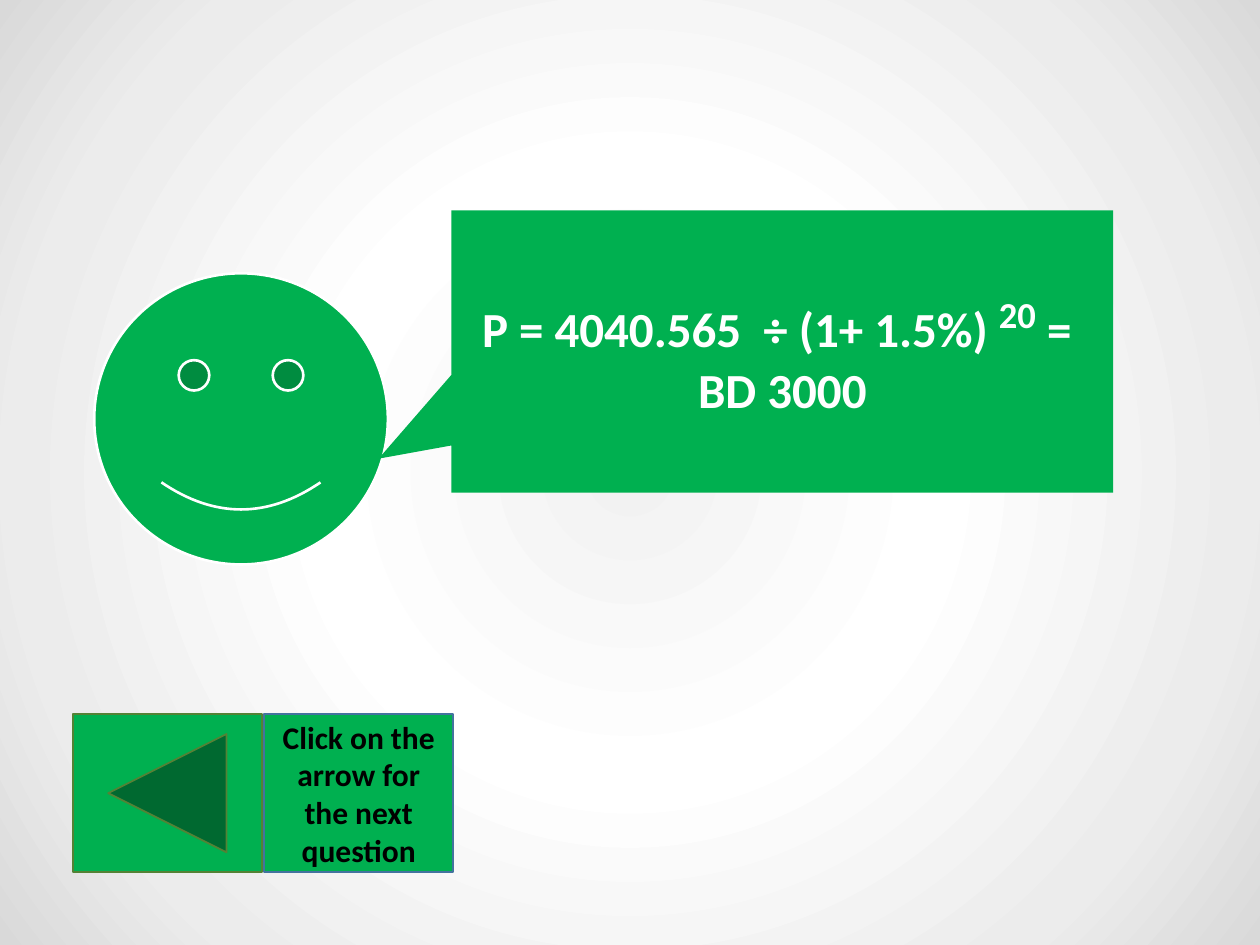
from dataclasses import dataclass

from pptx import Presentation
from pptx.dml.color import RGBColor
from pptx.enum.shapes import MSO_SHAPE as Shape
from pptx.enum.text import MSO_ANCHOR as Anchor, PP_ALIGN as Align
from pptx.oxml import parse_xml
from pptx.oxml.ns import nsdecls
from pptx.util import Cm, Pt


@dataclass(frozen=True)
class Theme:
    """Colours, font and type sizes of the slide."""
    font: str = "Calibri"
    green: str = "00B050"
    white: str = "FFFFFF"
    black: str = "000000"
    button_edge: str = "548235"
    hint_edge: str = "43739E"
    backdrop: tuple = ((0, "F2F2F2"), (39, "FFFFFF"), (78, "ECECEC"), (100, "D9D9D9"))
    formula_size: int = 28
    exponent_size: int = 36
    hint_size: int = 18


def add_text(paragraph, text, *, font, size, color, bold=True, baseline=0):
    """Append a formatted run to a centred paragraph."""
    paragraph.alignment = Align.CENTER
    run = paragraph.add_run()
    run.text = text
    run.font.name = font
    run.font.size = Pt(size)
    run.font.bold = bold
    run.font.color.rgb = RGBColor.from_string(color)
    if baseline:
        run._r.get_or_add_rPr().set("baseline", str(baseline * 1000))


class SlideBuilder:
    """Holds the theme and the current slide."""

    def __init__(self, slide, theme):
        self.slide = slide
        self.theme = theme

    def radial_background(self, stops):
        """Fill the background with a gradient spreading from the centre."""
        stop_xml = "".join(
            f'<a:gs pos="{position * 1000}"><a:srgbClr val="{color}"/></a:gs>'
            for position, color in stops)
        self.slide.element.cSld.insert(0, parse_xml(
            f'<p:bg {nsdecls("p", "a")}><p:bgPr><a:gradFill rotWithShape="1">'
            f'<a:gsLst>{stop_xml}</a:gsLst><a:path path="circle">'
            '<a:fillToRect l="50000" t="50000" r="50000" b="50000"/></a:path>'
            '</a:gradFill><a:effectLst/></p:bgPr></p:bg>'))

    def figure(self, kind, box, edge=None, edge_width=1, adjustments=(), flip=False):
        """Add a green preset shape with an optional outline."""
        figure = self.slide.shapes.add_shape(kind, *map(Cm, box))
        figure.shadow.inherit = False
        figure.fill.solid()
        figure.fill.fore_color.rgb = RGBColor.from_string(self.theme.green)
        if edge:
            figure.line.color.rgb = RGBColor.from_string(edge)
            figure.line.width = Pt(edge_width)
        else:
            figure.line.fill.background()
        for index, value in enumerate(adjustments):
            figure.adjustments[index] = value
        if flip:
            figure.element.spPr.xfrm.set("flipH", "1")
        return figure

    def caption(self, figure, lines, size, color):
        """Write lines of (text, format) pieces in the middle of a figure."""
        frame = figure.text_frame
        frame.word_wrap = True
        frame.vertical_anchor = Anchor.MIDDLE
        base = {"font": self.theme.font, "size": size, "color": color}
        for index, pieces in enumerate(lines):
            paragraph = frame.add_paragraph() if index else frame.paragraphs[0]
            for text, changes in pieces:
                add_text(paragraph, text, **{**base, **changes})


def main():
    """Build the answer slide and save it."""
    deck = Presentation()
    deck.slide_width, deck.slide_height = Cm(25.4), Cm(19.05)
    theme = Theme()
    answer = SlideBuilder(deck.slides.add_slide(deck.slide_layouts[6]), theme)
    answer.radial_background(theme.backdrop)

    answer.figure(Shape.SMILEY_FACE, (1.9, 5.51, 5.92, 5.87), theme.white, 1.5)

    left, top, width, height = 1.47, 14.4, 3.81, 3.18
    answer.figure(Shape.ACTION_BUTTON_BACK_OR_PREVIOUS, (left, top, width, height),
                  theme.button_edge)

    formula = answer.figure(Shape.RECTANGULAR_CALLOUT, (9.1, 4.24, 13.34, 5.69),
                            adjustments=(-0.61, 0.38))
    exponent = {"size": theme.exponent_size, "baseline": 30}
    answer.caption(formula, [
        [("P = 4040.565  ÷ (1+ 1.5%) ", {}), ("20", exponent), (" = ", {})],
        [("BD 3000", {})],
    ], theme.formula_size, theme.white)

    hint = answer.figure(Shape.PENTAGON, (left + width + 0.05, top, width, height),
                         theme.hint_edge, adjustments=(0,), flip=True)
    answer.caption(hint, [[("Click on the arrow for the next question", {})]],
                   theme.hint_size, theme.black)

    deck.save("out.pptx")


if __name__ == "__main__":
    main()
